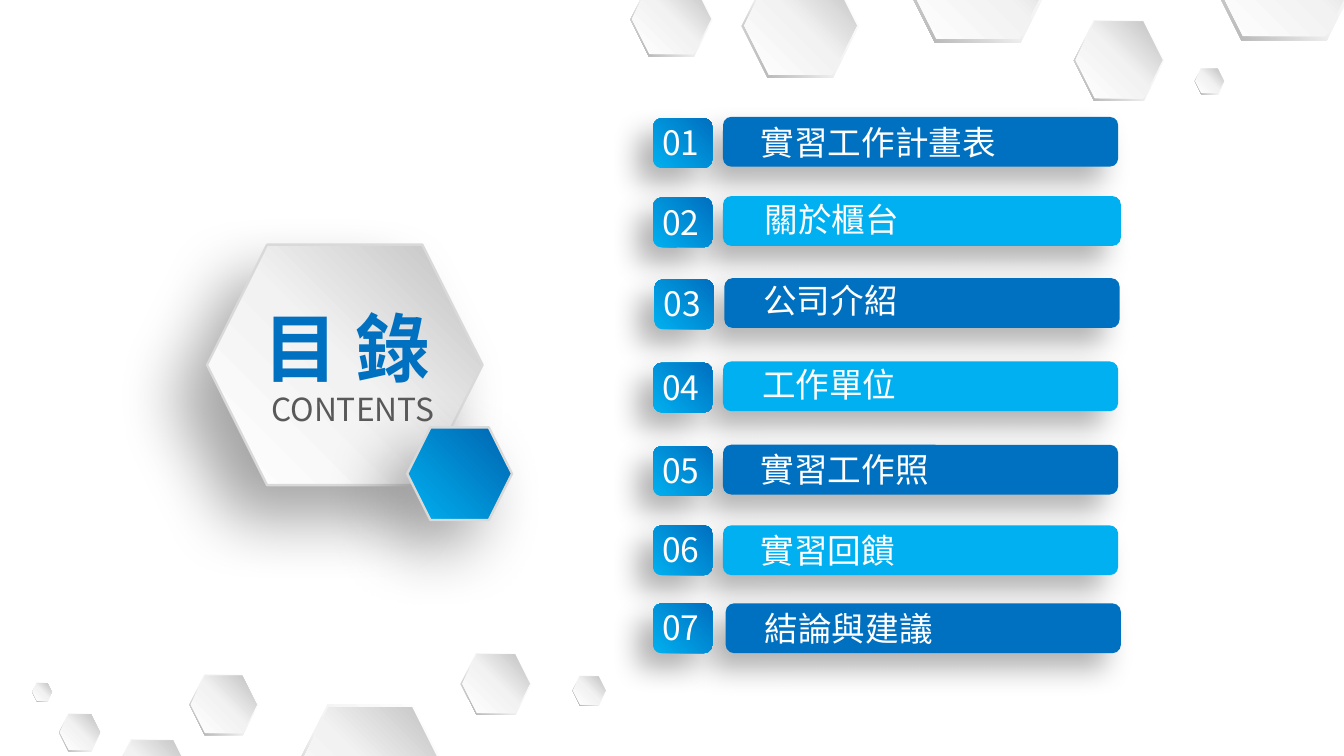
from lxml import etree
from pptx import Presentation
from pptx.dml.color import RGBColor
from pptx.enum.shapes import MSO_SHAPE
from pptx.enum.text import MSO_AUTO_SIZE, PP_ALIGN
from pptx.oxml.ns import qn
from pptx.util import Inches, Pt

HEXAGON = MSO_SHAPE.HEXAGON
ROUNDED = MSO_SHAPE.ROUNDED_RECTANGLE
FIT_SHAPE = MSO_AUTO_SIZE.SHAPE_TO_FIT_TEXT
LEFT, CENTER = PP_ALIGN.LEFT, PP_ALIGN.CENTER

WHITE = RGBColor(0xFF, 0xFF, 0xFF)
PALE = RGBColor(0xF2, 0xF2, 0xF2)
OUTLINE = RGBColor(0xD9, 0xD9, 0xD9)
SILVER = RGBColor(0xBF, 0xBF, 0xBF)
GRAY = RGBColor(0xA6, 0xA6, 0xA6)
DARK_GRAY = RGBColor(0x59, 0x59, 0x59)
BLUE = RGBColor(0x00, 0x70, 0xC0)
DEEP_BLUE = RGBColor(0x00, 0x65, 0xB0)
SKY = RGBColor(0x00, 0xB0, 0xF0)
BLACK = RGBColor(0x00, 0x00, 0x00)

ARIAL = "Arial"
NOTO = "Noto Sans CJK SC"

# Gradients: stops as (percent, colour), then the clockwise angle
SILVER_FACE = ([(0, WHITE), (50, PALE), (100, SILVER)], 315)
HEX_FACE = ([(0, WHITE), (51, PALE), (100, SILVER)], 315)
HEX_RIM = ([(0, WHITE), (55, PALE), (100, GRAY)], 135)
BLUE_FACE = ([(0, DEEP_BLUE), (100, SKY)], 135)
BADGE_FACE = ([(0, SKY), (100, BLUE)], 315)

# Shadows: opacity in percent, blur and distance in points
BAR_SHADOW = (30, 15, 12)

# Title, font, badge left and top, bar left, top and width, title left, top and width
ENTRIES = [
    ("實習工作計畫表", NOTO, 4.86, 0.88, 5.38, 0.87, 2.94, 5.53, 0.84, 2.79),
    ("關於櫃台", ARIAL, 4.86, 1.47, 5.38, 1.46, 2.96, 5.56, 1.41, 2.45),
    ("公司介紹", ARIAL, 4.87, 2.08, 5.39, 2.07, 2.94, 5.55, 2.01, 2.22),
    ("工作單位", ARIAL, 4.86, 2.70, 5.38, 2.69, 2.94, 5.54, 2.64, 2.24),
    ("實習工作照", ARIAL, 4.86, 3.32, 5.38, 3.31, 2.94, 5.53, 3.27, 2.22),
    ("實習回饋", ARIAL, 4.86, 3.91, 5.38, 3.91, 2.94, 5.53, 3.87, 2.24),
    ("結論與建議", NOTO, 4.86, 4.49, 5.40, 4.49, 2.94, 5.56, 4.45, 2.79),
]

# Left, top, width, height
DECORATIONS = [
    (6.70, -0.71, 1.15, 1.03), (4.69, -0.13, 0.61, 0.55),
    (5.52, -0.19, 0.87, 0.77), (7.99, 0.15, 0.67, 0.60),
    (0.85, 5.50, 0.57, 0.51), (4.26, 5.03, 0.25, 0.22),
    (3.43, 4.86, 0.52, 0.46), (8.98, -0.73, 1.15, 1.03),
    (2.18, 5.24, 1.15, 1.03), (1.41, 5.02, 0.51, 0.45),
    (0.44, 5.31, 0.31, 0.28), (0.24, 5.08, 0.15, 0.14),
    (8.89, 0.51, 0.22, 0.19),
]


def fill_gradient(sp, stops, angle):
    sp.fill.gradient()
    sp.fill.gradient_angle = 360 - angle
    gs_list = sp._element.spPr.find(".//" + qn("a:gsLst"))
    gs_list.clear()
    for percent, color in stops:
        gs = etree.SubElement(gs_list, qn("a:gs"), pos=str(percent * 1000))
        etree.SubElement(gs, qn("a:srgbClr"), val=str(color))


def add_shadow(sp, opacity, blur, distance):
    """Cast a soft black shadow towards the lower left."""
    effects = sp._element.spPr.find(qn("a:effectLst"))
    shadow = etree.SubElement(
        effects, qn("a:outerShdw"), blurRad=str(Pt(blur)), dist=str(Pt(distance)),
        dir=str(135 * 60000), algn="tr", rotWithShape="0")
    color = etree.SubElement(shadow, qn("a:srgbClr"), val=str(BLACK))
    etree.SubElement(color, qn("a:alpha"), val=str(opacity * 1000))


def add_block(slide, kind, box, fill, outline=None, shadow=None):
    """Add a preset shape; fill is a colour or a gradient."""
    sp = slide.shapes.add_shape(kind, *map(Inches, box))
    sp.shadow.inherit = False
    if isinstance(fill, RGBColor):
        sp.fill.solid()
        sp.fill.fore_color.rgb = fill
    else:
        fill_gradient(sp, *fill)
    if outline:
        sp.line.color.rgb = outline
        sp.line.width = Pt(1.25)
    else:
        sp.line.fill.background()
    if shadow:
        add_shadow(sp, *shadow)


def add_text(slide, box, text, font, size=18, color=WHITE, bold=False,
             align=LEFT, inset=(0.1, 0.05), wrap=True):
    tf = slide.shapes.add_textbox(*map(Inches, box)).text_frame
    tf.word_wrap = wrap
    tf.auto_size = FIT_SHAPE
    tf.margin_left = tf.margin_right = Inches(inset[0])
    tf.margin_top = tf.margin_bottom = Inches(inset[1])
    p = tf.paragraphs[0]
    p.text = text
    p.alignment = align
    p.font.name = font
    p.font.size = Pt(size)
    p.font.bold = bold
    p.font.color.rgb = color


def add_heading(slide):
    add_block(slide, HEXAGON, (1.54, 1.82, 2.05, 1.79), SILVER_FACE, OUTLINE, (35, 35, 25))
    add_block(slide, HEXAGON, (3.03, 3.18, 0.78, 0.69), BLUE_FACE, OUTLINE, (35, 35, 20))
    add_text(slide, (1.77, 2.2, 1.62, 0.77), "目 錄", ARIAL, 40, BLUE, True,
             CENTER, (0, 0.05))
    add_text(slide, (1.82, 2.85, 1.61, 0.39), "CONTENTS", NOTO, 17, DARK_GRAY,
             align=CENTER)


def add_entry(slide, number, title, font, badge_left, badge_top, bar_left, bar_top,
              bar_width, title_left, title_top, title_width):
    bar_color = BLUE if number % 2 else SKY
    add_block(slide, ROUNDED, (bar_left, bar_top, bar_width, 0.37), bar_color,
              shadow=BAR_SHADOW)
    add_text(slide, (title_left, title_top, title_width, 0.44), title, font,
             inset=(0.13, 0.07))
    add_block(slide, ROUNDED, (badge_left, badge_top, 0.44, 0.37), BADGE_FACE,
              shadow=BAR_SHADOW)
    add_text(slide, (badge_left - 0.03, badge_top - 0.02, 0.5, 0.4),
             f"{number:02}", NOTO, wrap=False)


def add_decoration(slide, left, top, width, height):
    """Add a hexagon with a slightly smaller face set into its rim."""
    add_block(slide, HEXAGON, (left, top, width, height), HEX_RIM)
    face = (left + 0.02 * width, top + 0.02 * height, 0.96 * width, 0.95 * height)
    add_block(slide, HEXAGON, face, HEX_FACE)


def main():
    prs = Presentation()
    prs.slide_width = Inches(10)
    prs.slide_height = prs.slide_width * 9 // 16
    slide = prs.slides.add_slide(prs.slide_layouts[6])
    add_heading(slide)
    for number, entry in enumerate(ENTRIES, 1):
        add_entry(slide, number, *entry)
    for box in DECORATIONS:
        add_decoration(slide, *box)
    prs.save("out.pptx")


if __name__ == "__main__":
    main()
